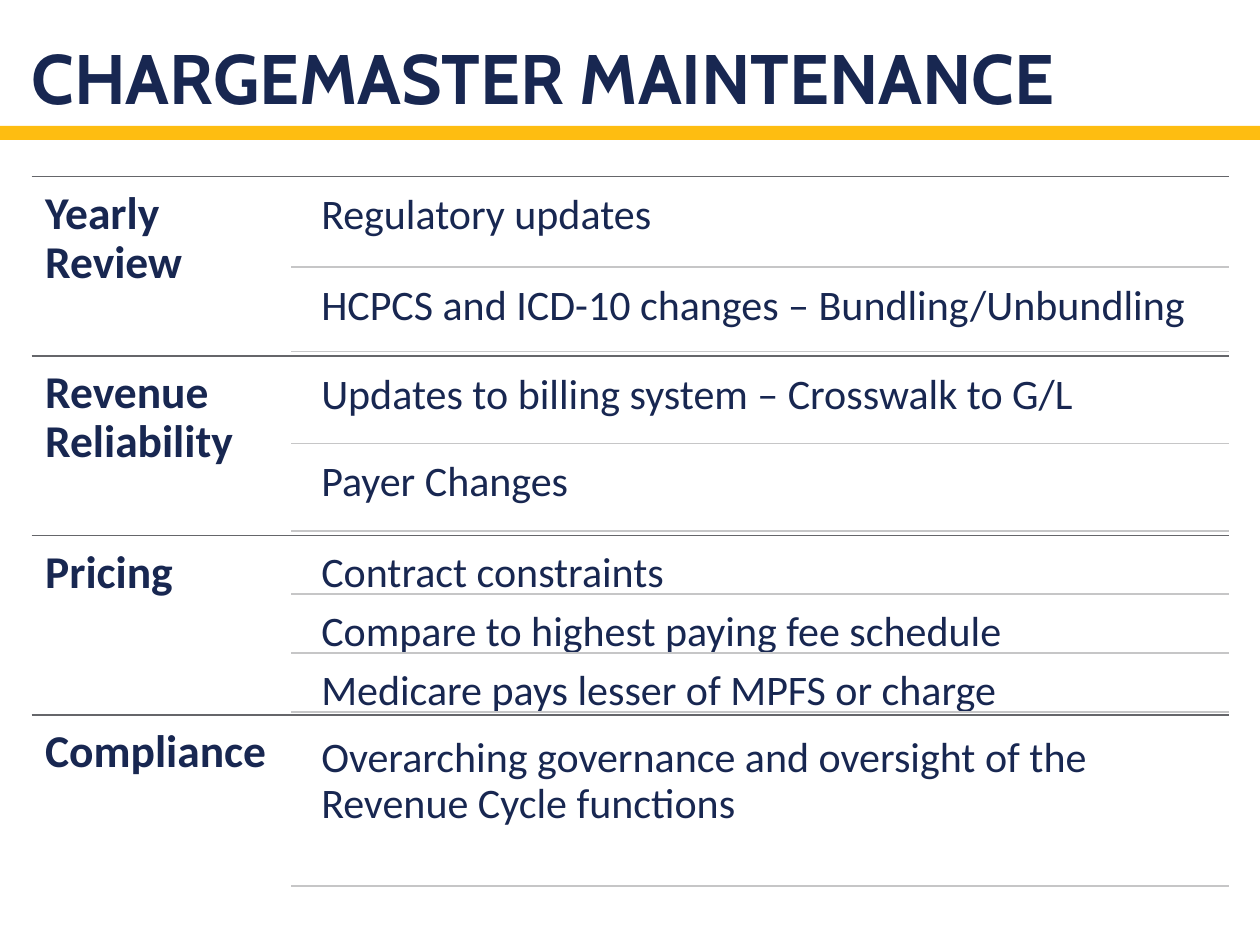
from lxml import etree
from pptx import Presentation
from pptx.dml.color import RGBColor
from pptx.enum import shapes, text
from pptx.oxml import ns
from pptx.util import Pt

NAVY = RGBColor(0x18, 0x27, 0x51)
GOLD = RGBColor(0xFE, 0xBD, 0x11)
DARK = RGBColor(0x65, 0x66, 0x6A)
LIGHT = RGBColor(0xC6, 0xC6, 0xC7)

TOPICS = [
    ("Yearly Review", [
        (0.52, "Regulatory updates"),
        (0.48, "HCPCS and ICD-10 changes – Bundling/Unbundling"),
    ]),
    ("Revenue Reliability", [
        (1 / 2, "Updates to billing system – Crosswalk to G/L"),
        (1 / 2, "Payer Changes"),
    ]),
    ("Pricing", [
        (1 / 3, "Contract constraints"),
        (1 / 3, "Compare to highest paying fee schedule"),
        (1 / 3, "Medicare pays lesser of MPFS or charge"),
    ]),
    ("Compliance", [
        (1, "Overarching governance and oversight of the Revenue Cycle functions"),
    ]),
]


def add_text(slide, box, words, size, pad, font="Calibri", bold=False,
             anchor=text.MSO_ANCHOR.TOP):
    frame = slide.shapes.add_textbox(*map(Pt, box)).text_frame
    frame.word_wrap = True
    frame.vertical_anchor = anchor
    frame.margin_left = frame.margin_right = Pt(pad[0])
    frame.margin_top = frame.margin_bottom = Pt(pad[1])
    para = frame.paragraphs[0]
    para.text = words
    para.line_spacing = 0.9
    para.font.name = font
    para.font.size = Pt(size)
    para.font.bold = bold
    para.font.color.rgb = NAVY


def add_rule(slide, left, right, top, color):
    rule = slide.shapes.add_connector(
        shapes.MSO_CONNECTOR.STRAIGHT, Pt(left), Pt(top), Pt(right), Pt(top))
    rule.line.color.rgb = color
    rule.line.width = Pt(1)
    etree.SubElement(rule._element.spPr, ns.qn("a:effectLst"))


def add_header(slide, left, top, width, height):
    bar = slide.shapes.add_shape(
        shapes.MSO_SHAPE.RECTANGLE, Pt(left), Pt(top + height), Pt(width), Pt(8))
    bar.shadow.inherit = False
    bar.fill.solid()
    bar.fill.fore_color.rgb = GOLD
    bar.line.fill.background()
    add_text(slide, (left + 18, top, width - 36, height), "CHARGEMASTER MAINTENANCE",
             40, (0, 3.6), "Cabin", True, text.MSO_ANCHOR.BOTTOM)


def add_topic(slide, left, top, width, height, name, rows):
    right = left + width
    side = 148.5
    inset = 10
    gap = 5 / len(rows)
    room = height - gap * (len(rows) + 1)
    add_rule(slide, left, right, top, DARK)
    add_text(slide, (left, top, side, height), name, 26, (7.8, 7.8), bold=True)
    for share, words in rows:
        top += gap
        box = (left + side + inset, top, width - side - inset, room * share)
        add_text(slide, box, words, 24, (7.2, 7.2))
        top += room * share
        add_rule(slide, left + side, right, top, LIGHT)


def add_list(slide, left, top, width, height):
    step = height / len(TOPICS)
    for i, (name, rows) in enumerate(TOPICS):
        add_topic(slide, left, top + i * step, width, step, name, rows)


def main():
    deck = Presentation()
    deck.slide_width, deck.slide_height = Pt(720), Pt(540)
    slide = deck.slides.add_slide(deck.slide_layouts[6])
    add_header(slide, 0, 0, 720, 72)
    add_list(slide, 18, 100.8, 684, 410.4)
    deck.save("out.pptx")


if __name__ == "__main__":
    main()
